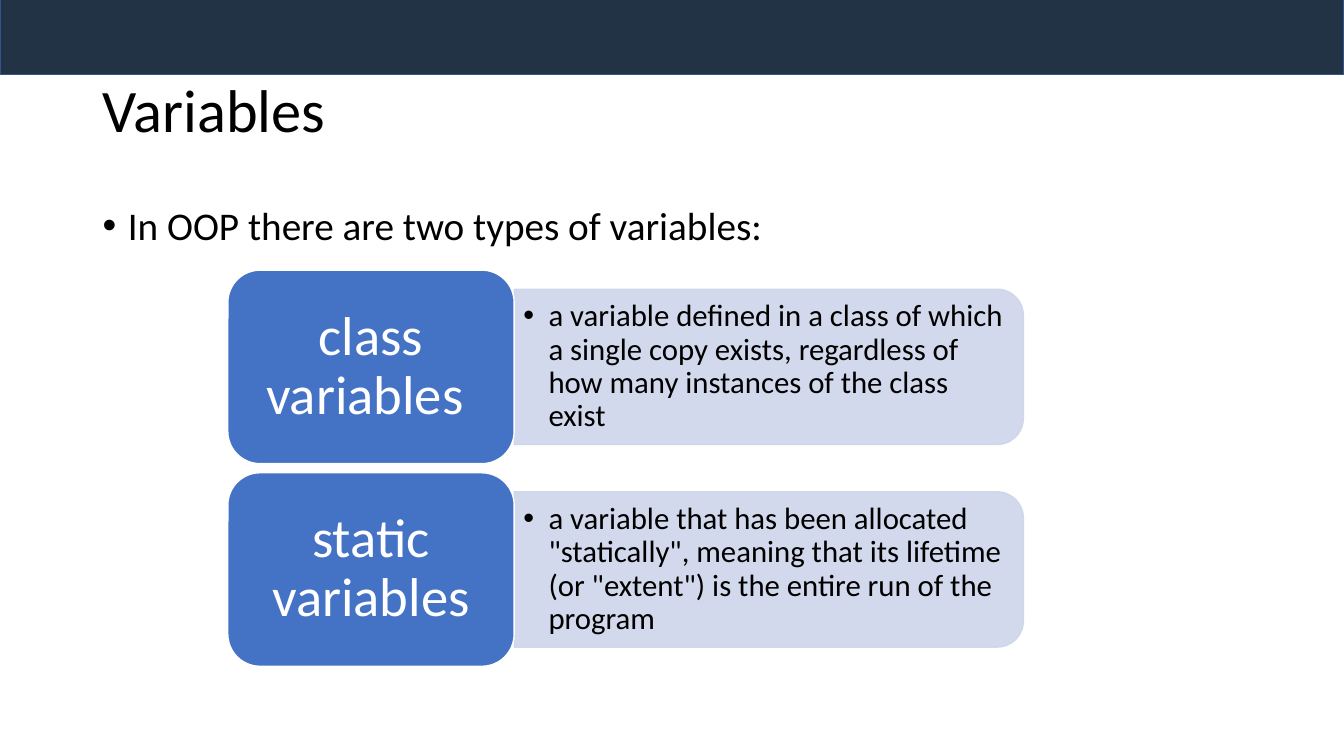
import math

from lxml import etree
from pptx import Presentation
from pptx.dml.color import RGBColor
from pptx.enum import shapes, text
from pptx.oxml import ns
from pptx.util import Inches, Pt

TITLE = "Variables"
INTRO = "In OOP there are two types of variables:"
VARIABLE_TYPES = [
    ("class variables ",
     "a variable defined in a class of which a single copy exists, "
     "regardless of how many instances of the class exist"),
    ("static variables",
     "a variable that has been allocated \"statically\", meaning that its "
     "lifetime (or \"extent\") is the entire run of the program"),
]
COLORS = {"bar": "223346", "bar line": "325491", "card": "4472C4",
          "panel": "CFD5EA", "white": "FFFFFF", "black": "000000"}
FONT = "Calibri"

# Layout in inches
SLIDE_WIDTH, SLIDE_HEIGHT = 13.33, 7.5
CARD_LEFT, CARD_TOP, CARD_WIDTH, CARD_HEIGHT = 2.26, 2.68, 2.84, 1.92
ROW_STEP = 2.01
PANEL_WIDTH, PANEL_HEIGHT, PANEL_RADIUS = 5.05, 1.54, 0.26


def color(name):
    return RGBColor.from_string(COLORS[name])


def write(shape, words, size, ink="black", align=text.PP_ALIGN.LEFT, bullet=False,
          anchor=text.MSO_ANCHOR.MIDDLE, insets=(0.1, 0.05, 0.1, 0.05)):
    frame = shape.text_frame
    frame.word_wrap = True
    frame.auto_size = text.MSO_AUTO_SIZE.NONE
    frame.vertical_anchor = anchor
    (frame.margin_left, frame.margin_top,
     frame.margin_right, frame.margin_bottom) = map(Inches, insets)
    paragraph = frame.paragraphs[0]
    paragraph.alignment = align
    paragraph.line_spacing = 0.9
    paragraph.space_before = Pt(0)
    if bullet:
        properties = paragraph._p.get_or_add_pPr()
        properties.set("marL", str(Inches(0.25)))
        properties.set("indent", str(-Inches(0.25)))
        etree.SubElement(properties, ns.qn("a:buFont"), typeface="Arial")
        etree.SubElement(properties, ns.qn("a:buChar"), char="•")
    run = paragraph.add_run()
    run.text = words
    run.font.name = FONT
    run.font.size = Pt(size)
    run.font.color.rgb = color(ink)


def paint(shape, fill, line, alpha=None):
    shape.shadow.inherit = False
    shape.fill.solid()
    shape.fill.fore_color.rgb = color(fill)
    shape.line.color.rgb = color(line)
    shape.line.width = Pt(1)
    if alpha:
        for tint in shape._element.spPr.iter(ns.qn("a:srgbClr")):
            etree.SubElement(tint, ns.qn("a:alpha"), val=str(alpha * 1000))


def add_panel(slide, left, top):
    """Draw a rectangle whose two right corners are rounded."""
    right, bottom = left + PANEL_WIDTH, top + PANEL_HEIGHT
    center_x = right - PANEL_RADIUS
    points = []
    for center_y, start in ((top + PANEL_RADIUS, -90), (bottom - PANEL_RADIUS, 0)):
        for degrees in range(start, start + 91, 6):
            angle = math.radians(degrees)
            points.append((center_x + PANEL_RADIUS * math.cos(angle),
                           center_y + PANEL_RADIUS * math.sin(angle)))
    points.append((left, bottom))
    builder = slide.shapes.build_freeform(Inches(left), Inches(top))
    builder.add_line_segments([(Inches(x), Inches(y)) for x, y in points], close=True)
    return builder.convert_to_shape()


def main():
    presentation = Presentation()
    presentation.slide_width = Inches(SLIDE_WIDTH)
    presentation.slide_height = Inches(SLIDE_HEIGHT)
    slide = presentation.slides.add_slide(presentation.slide_layouts[5])

    # Top bar, placed behind the title
    bar = slide.shapes.add_shape(shapes.MSO_SHAPE.RECTANGLE, 0, Inches(-0.04),
                                 Inches(SLIDE_WIDTH), Inches(0.78))
    paint(bar, "bar", "bar line")
    slide.shapes._spTree.insert(2, bar._element)

    # Title and introduction
    title = slide.shapes.title
    title.left, title.top = Inches(0.92), Inches(0.4)
    title.width, title.height = Inches(11.5), Inches(1.45)
    write(title, TITLE, 43.1)
    intro = slide.shapes.add_textbox(Inches(0.92), Inches(2), Inches(11.5), Inches(0.6))
    write(intro, INTRO, 28, bullet=True, anchor=text.MSO_ANCHOR.TOP)

    # One row per type: definition panel, then name card
    for row, (name, definition) in enumerate(VARIABLE_TYPES):
        top = CARD_TOP + row * ROW_STEP
        panel = add_panel(slide, CARD_LEFT + CARD_WIDTH,
                          top + (CARD_HEIGHT - PANEL_HEIGHT) / 2)
        paint(panel, "panel", "panel", alpha=90)
        write(panel, definition, 22, bullet=True, insets=(0.09, 0.12, 0.17, 0.12))
        card = slide.shapes.add_shape(
            shapes.MSO_SHAPE.ROUNDED_RECTANGLE, Inches(CARD_LEFT), Inches(top),
            Inches(CARD_WIDTH), Inches(CARD_HEIGHT))
        paint(card, "card", "white")
        # The rounded corners add 0.09 inches of their own to the insets
        write(card, name, 39, ink="white", align=text.PP_ALIGN.CENTER,
              insets=(0.17, 0.08, 0.17, 0.08))

    presentation.save("out.pptx")


if __name__ == "__main__":
    main()
